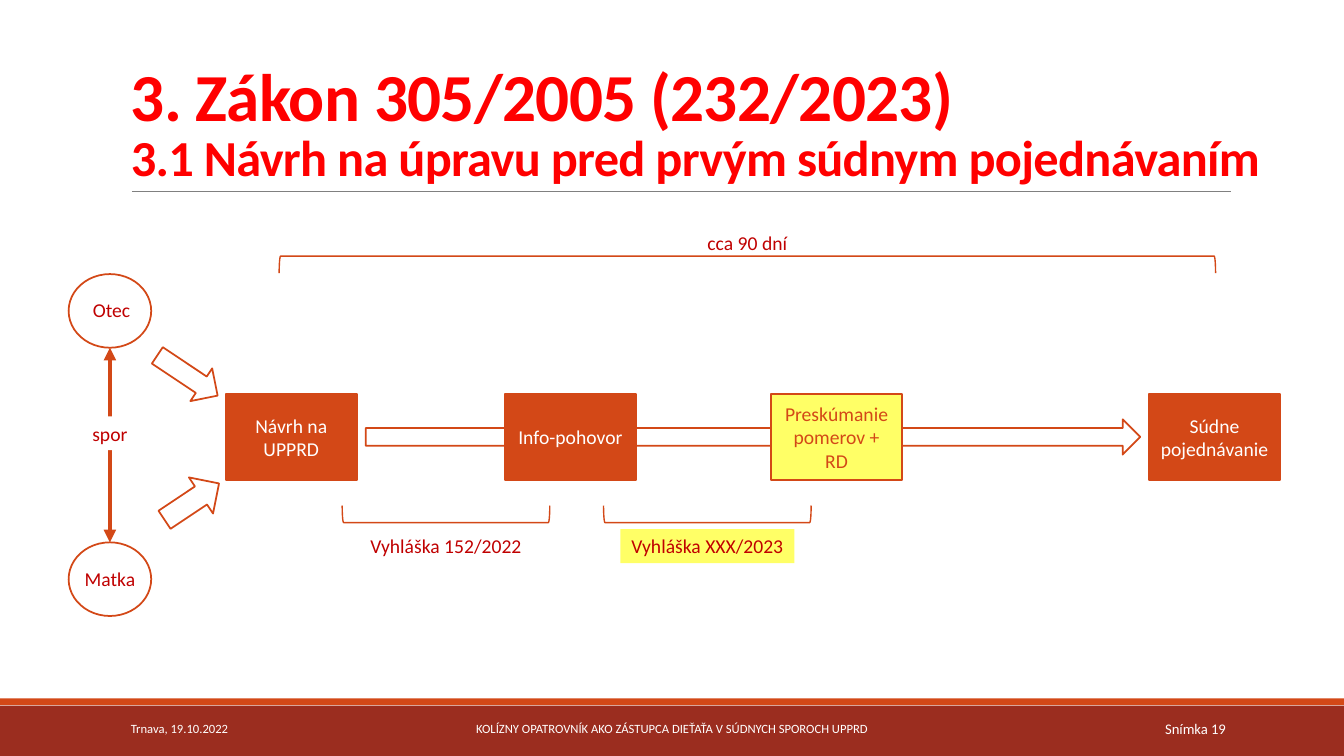
from collections import namedtuple
from dataclasses import dataclass

from lxml.etree import SubElement
from pptx import Presentation
from pptx.dml.color import RGBColor
from pptx.enum.shapes import MSO_CONNECTOR as Connector, MSO_SHAPE as Preset
from pptx.enum.text import MSO_ANCHOR as Anchor, PP_ALIGN as Align
from pptx.oxml.ns import qn
from pptx.util import Pt

Box = namedtuple("Box", "left top width height")


@dataclass(frozen=True)
class Theme:
    font: str = "Calibri"
    orange: str = "D34817"
    brick: str = "9B2D1F"
    yellow: str = "FFFF66"
    white: str = "FFFFFF"
    grey: str = "808080"
    title: str = "FF0000"
    label: str = "C00000"
    title_size: float = 48
    subtitle_size: float = 36
    body_size: float = 14
    number_size: float = 10.5
    footer_size: float = 9


THEME = Theme()
LABEL_HEIGHT = 24.2


def color(code):
    return RGBColor.from_string(code)


def write(shape, text, size=THEME.body_size, fill=THEME.white, align=Align.CENTER,
          anchor=Anchor.MIDDLE, wrap=True):
    frame = shape.text_frame
    frame.word_wrap = wrap
    frame.vertical_anchor = anchor
    paragraph = frame.paragraphs[0]
    paragraph.alignment = align
    return add_run(paragraph, text, size, fill)


def add_run(paragraph, text, size, fill, bold=False):
    run = paragraph.add_run()
    run.text = text
    font = run.font
    font.name, font.size, font.bold = THEME.font, Pt(size), bold
    font.color.rgb = color(fill)
    return run


def add_text(slide, box, text, **text_format):
    shape = slide.shapes.add_textbox(*map(Pt, box))
    write(shape, text, **text_format)
    return shape


def add_preset(slide, preset, box, fill=None, line=None, weight=1.25, rotation=0):
    shape = slide.shapes.add_shape(preset, *map(Pt, box))
    shape.shadow.inherit = False
    shape.rotation = rotation
    if fill:
        shape.fill.solid()
        shape.fill.fore_color.rgb = color(fill)
    else:
        shape.fill.background()
    if line:
        shape.line.color.rgb = color(line)
        shape.line.width = Pt(weight)
    else:
        shape.line.fill.background()
    return shape


def add_line(slide, start, end, stroke, weight, arrows=False):
    connector = slide.shapes.add_connector(Connector.STRAIGHT, *map(Pt, start + end))
    connector.line.color.rgb = color(stroke)
    connector.line.width = Pt(weight)
    if arrows:
        outline = connector.line._get_or_add_ln()
        for end_name in ("a:headEnd", "a:tailEnd"):
            SubElement(outline, qn(end_name), type="triangle")
    SubElement(connector._element.spPr, qn("a:effectLst"))


def add_label(slide, center, top, width, text, fill=None):
    box = Box(center - width / 2, top, width, LABEL_HEIGHT)
    shape = add_preset(slide, Preset.RECTANGLE, box, fill=fill)
    write(shape, text, fill=THEME.label, wrap=False)


def add_bracket(slide, box, rotation):
    center_x = box.left + box.width / 2
    center_y = box.top + box.height / 2
    upright = Box(center_x - box.height / 2, center_y - box.width / 2, box.height, box.width)
    add_preset(slide, Preset.RIGHT_BRACKET, upright, line=THEME.orange, weight=1,
               rotation=rotation)


def draw_title(slide, box):
    shape = slide.shapes.add_textbox(*map(Pt, box))
    heading = write(shape, "3. Zákon 305/2005 (232/2023)", size=THEME.title_size,
                    fill=THEME.title, align=Align.LEFT, anchor=Anchor.BOTTOM)
    heading.font.bold = True
    paragraph = shape.text_frame.paragraphs[0]
    paragraph.line_spacing = 0.85
    paragraph.add_line_break()
    add_run(paragraph, "3.1 Návrh na úpravu pred prvým súdnym pojednávaním",
            THEME.subtitle_size, THEME.title, bold=True)
    for run in paragraph.runs:
        run.font._element.set("spc", "-50")
    rule_y = box.top + box.height + 0.2
    add_line(slide, (box.left + 7.8, rule_y), (box.left + 792.6, rule_y), THEME.grey, 0.5)


def draw_parents(slide, box):
    center = box.left + box.width / 2
    circle_height = 52.6
    bottom = box.top + box.height
    for top in (box.top, bottom - circle_height):
        add_preset(slide, Preset.OVAL, Box(box.left, top, box.width, circle_height),
                   line=THEME.orange)
    add_line(slide, (center, box.top + circle_height), (center, bottom - circle_height),
             THEME.orange, 3, arrows=True)
    add_label(slide, center, box.top + 101.6, 39.6, "spor", THEME.white)
    add_label(slide, center + 1.2, box.top + 13, 41.8, "Otec")
    add_label(slide, center, box.top + 205.4, 51.1, "Matka")
    right = box.left + box.width
    for arrow, rotation in ((Box(right, box.top + 58.4, 51.8, 28.1), 33.7),
                            (Box(right + 5.6, box.top + 147, 46.8, 31), 326.3)):
        add_preset(slide, Preset.RIGHT_ARROW, arrow, line=THEME.orange, rotation=rotation)


def draw_process(slide, box):
    node_width, node_height, gap = 93.6, 61.2, 6.3
    node_top = box.top + 120.2
    arrow_height = 25.2
    add_preset(slide, Preset.RIGHT_ARROW,
               Box(box.left + node_width + gap, node_top + (node_height - arrow_height) / 2,
                   box.width - 2 * (node_width + gap), arrow_height), line=THEME.orange)
    nodes = (
        (0, "Návrh na UPPRD", THEME.orange, THEME.white),
        (199.4, "Info-pohovor", THEME.orange, THEME.white),
        (389.5, "Preskúmanie pomerov + RD", THEME.yellow, THEME.orange),
        (box.width - node_width, "Súdne pojednávanie", THEME.orange, THEME.white),
    )
    for offset, text, fill, text_fill in nodes:
        node = add_preset(slide, Preset.RECTANGLE,
                          Box(box.left + offset, node_top, node_width, node_height),
                          fill=fill, line=THEME.orange)
        write(node, text, fill=text_fill)

    bracket_height = 12.2
    span = Box(box.left + 38.1, box.top + 21.6, 668.9, bracket_height)
    add_bracket(slide, span, 270)
    add_label(slide, span.left + span.width / 2, box.top, 72, "cca 90 dní")
    decrees = (("Vyhláška 152/2022", None), ("Vyhláška XXX/2023", THEME.yellow))
    for index, (text, fill) in enumerate(decrees):
        span = Box(box.left + 83.1 + 186.7 * index, box.top + 199.8, 148.3, bracket_height)
        add_bracket(slide, span, 90)
        add_label(slide, span.left + span.width / 2, box.top + 216.7, 124.4, text, fill)


def draw_footer(slide, box):
    stripe = 5.2
    add_preset(slide, Preset.RECTANGLE,
               Box(box.left, box.top + stripe, box.width, box.height - stripe),
               fill=THEME.brick)
    add_preset(slide, Preset.RECTANGLE, Box(box.left, box.top, box.width, 5),
               fill=THEME.orange)
    texts = (
        (86.4, 194.4, "Trnava, 19.10.2022", THEME.footer_size, Align.LEFT),
        (290.2, 379.4, "KOLÍZNY OPATROVNÍK AKO ZÁSTUPCA DIEŤAŤA V SÚDNYCH SPOROCH UPPRD",
         THEME.footer_size, Align.CENTER),
        (779.8, 103, "Snímka 19", THEME.number_size, Align.RIGHT),
    )
    for offset, width, text, size, align in texts:
        add_text(slide, Box(box.left + offset, box.top + 7.4, width, 28.8), text,
                 size=size, align=align)


def main():
    presentation = Presentation()
    presentation.slide_width, presentation.slide_height = Pt(960), Pt(540)
    slide = presentation.slides.add_slide(presentation.slide_layouts[6])
    draw_footer(slide, Box(0, 498.8, 960, 41.2))
    draw_title(slide, Box(86.4, 22.3, 854.6, 114.5))
    draw_parents(slide, Box(49, 195.8, 59, 244.2))
    draw_process(slide, Box(161.3, 161.3, 753.1, 241))
    presentation.save("out.pptx")


if __name__ == "__main__":
    main()
